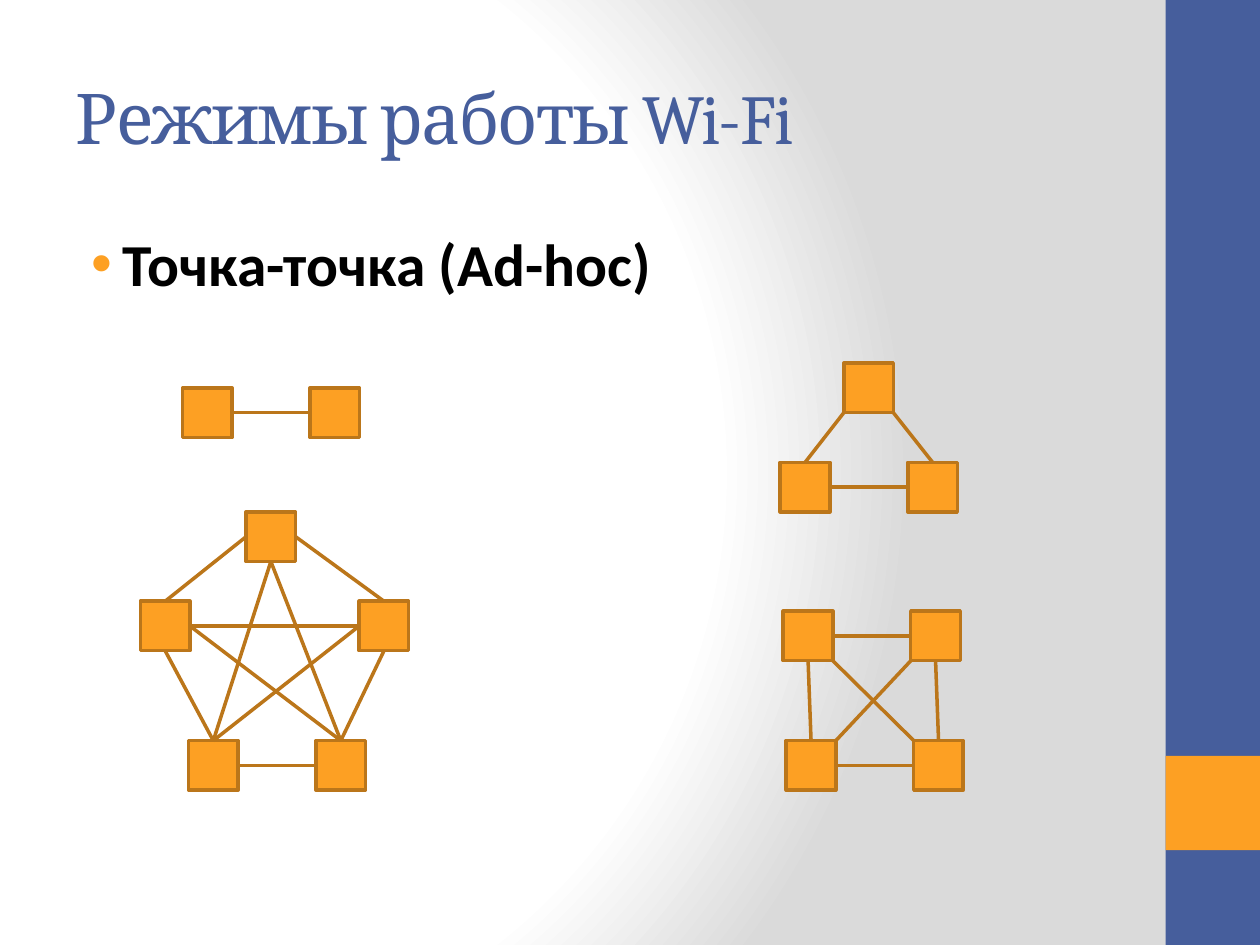
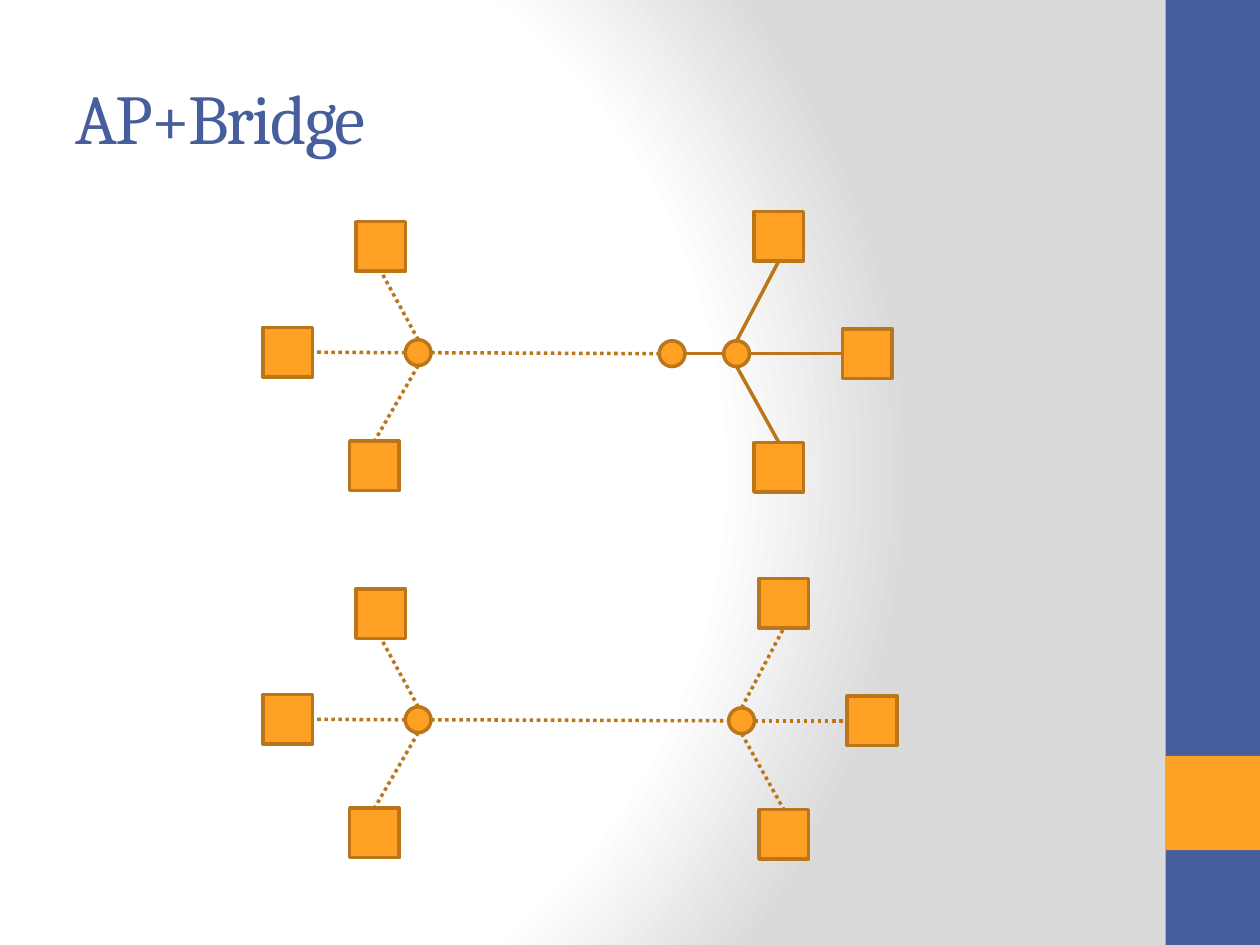
from itertools import pairwise

from lxml.etree import SubElement
from pptx import Presentation
from pptx.dml.color import RGBColor
from pptx.enum.dml import MSO_LINE
from pptx.enum.shapes import MSO_CONNECTOR, MSO_SHAPE
from pptx.enum.text import MSO_ANCHOR, MSO_AUTO_SIZE, PP_ALIGN
from pptx.oxml import parse_xml
from pptx.oxml.ns import nsdecls, qn
from pptx.util import Cm, Pt

COLORS = {
    "blue": "465E9C",
    "orange": "FDA023",
    "brown": "BB761A",
    "black": "000000",
    "white": "FFFFFF",
    "gray": "DADADA",
}
STATION, HUB = 1, 0.52  # sizes of squares and circles, cm

# Points of a shape as fractions of its width and height
SITES = {
    "top": (0.5, 0), "left": (0, 0.5), "bottom": (0.5, 1), "right": (1, 0.5),
    "top left": (0, 0), "top right": (1, 0),
    "bottom left": (0, 1), "bottom right": (1, 1),
}
JOINTS = {"top": 0, "left": 1, "bottom": 2, "right": 3}


class Deck:
    """Holds the common style and the slide being drawn."""

    def __init__(self):
        self.presentation = Presentation()
        self.presentation.slide_width = Cm(25.4)
        self.presentation.slide_height = Cm(19.05)
        self.set_background()

    def set_background(self):
        master = self.presentation.slide_master
        master.background.fill.solid()
        properties = master.element.find(".//" + qn("p:bgPr"))
        stops = "".join(
            f'<a:gs pos="{position}"><a:srgbClr val="{COLORS[name]}"/></a:gs>'
            for position, name in ((0, "white"), (75000, "white"), (100000, "gray")))
        gradient = parse_xml(
            f'<a:gradFill {nsdecls("a")} rotWithShape="1"><a:gsLst>{stops}</a:gsLst>'
            '<a:path path="circle"><a:fillToRect l="20000" t="50000" r="100000" b="50000"/>'
            '</a:path></a:gradFill>')
        properties.replace(properties.find(qn("a:solidFill")), gradient)

    def color(self, name):
        return RGBColor.from_string(COLORS[name])

    def add_slide(self, title):
        layout = self.presentation.slide_layouts.get_by_name("Title Only")
        self.slide = self.presentation.slides.add_slide(layout)
        self.shapes = self.slide.shapes
        self.add_box(MSO_SHAPE.RECTANGLE, 23.5, 0, 1.9, 19.05, "blue")
        self.add_box(MSO_SHAPE.RECTANGLE, 23.5, 15.24, 1.9, 1.9, "orange")
        self.format_title(title)

    def format_title(self, text):
        title = self.slide.shapes.title
        title.left, title.top = Cm(1.27), Cm(0.76)
        title.width, title.height = Cm(21.16), Cm(3.18)
        frame = title.text_frame
        frame.text = text
        frame.word_wrap = True
        frame.auto_size = MSO_AUTO_SIZE.NONE
        frame.vertical_anchor = MSO_ANCHOR.MIDDLE
        paragraph = frame.paragraphs[0]
        paragraph.alignment = PP_ALIGN.LEFT
        self.format_run(paragraph.runs[0], "Cambria", 40, "blue")
        paragraph.runs[0].font._element.set("spc", "-100")

    def format_run(self, run, font_name, size, color, bold=False):
        run.font.name = font_name
        run.font.size = Pt(size)
        run.font.bold = bold
        run.font.color.rgb = self.color(color)

    def add_bullet(self, text, left, top, width, height):
        box = self.shapes.add_textbox(Cm(left), Cm(top), Cm(width), Cm(height))
        box.text_frame.word_wrap = True
        paragraph = box.text_frame.paragraphs[0]
        paragraph.text = text
        paragraph.space_before = Pt(6.8)
        self.format_run(paragraph.runs[0], "Calibri", 34, "black", bold=True)
        properties = paragraph._p.get_or_add_pPr()
        properties.set("marL", str(Cm(0.96)))
        properties.set("indent", str(Cm(-0.64)))
        bullet_color = SubElement(properties, qn("a:buClr"))
        SubElement(bullet_color, qn("a:srgbClr"), val=COLORS["orange"])
        SubElement(properties, qn("a:buFont"), typeface="Arial")
        SubElement(properties, qn("a:buChar"), char="•")

    def add_box(self, kind, left, top, width, height, fill, line=None):
        shape = self.shapes.add_shape(kind, Cm(left), Cm(top), Cm(width), Cm(height))
        shape.shadow.inherit = False
        shape.fill.solid()
        shape.fill.fore_color.rgb = self.color(fill)
        if line:
            shape.line.color.rgb = self.color(line)
            shape.line.width = Pt(2)
        else:
            shape.line.fill.background()
        return shape

    def add_station(self, left, top):
        return self.add_box(MSO_SHAPE.RECTANGLE, left, top, STATION, STATION, "orange", "brown")

    def add_hub(self, center_x, center_y):
        return self.add_box(MSO_SHAPE.OVAL, center_x - HUB / 2, center_y - HUB / 2,
                            HUB, HUB, "orange", "brown")

    def add_link(self, start, start_site, end, end_site, dotted=False):
        points = []
        for shape, site in ((start, start_site), (end, end_site)):
            across, down = SITES[site]
            points += [int(shape.left + across * shape.width),
                       int(shape.top + down * shape.height)]
        link = self.shapes.add_connector(MSO_CONNECTOR.STRAIGHT, *points)
        for shape, site, connect in ((start, start_site, link.begin_connect),
                                     (end, end_site, link.end_connect)):
            if shape.auto_shape_type == MSO_SHAPE.RECTANGLE and site in JOINTS:
                connect(shape, JOINTS[site])
        link.line.color.rgb = self.color("brown")
        link.line.width = Pt(2)
        if dotted:
            link.line.dash_style = MSO_LINE.ROUND_DOT
        SubElement(link._element.spPr, qn("a:effectLst"))

    def add_mesh(self, positions, links):
        """Draw one group of stations and the links between them."""
        self.shapes = self.slide.shapes.add_group_shape().shapes
        stations = [self.add_station(*position) for position in positions]
        for start, start_site, end, end_site in links:
            self.add_link(stations[start], start_site, stations[end], end_site)
        self.shapes = self.slide.shapes

    def add_star(self, center_x, center_y, arms, side, dotted):
        """Draw a hub with stations beside, above and below it."""
        hub = self.add_hub(center_x, center_y)
        opposite = {"left": "right", "right": "left", "top": "bottom", "bottom": "top"}
        for site, (x, y) in zip((side, "top", "bottom"), arms):
            station = self.add_station(center_x + x, center_y + y)
            self.add_link(hub, site, station, opposite[site], dotted)
        return hub


def draw_ad_hoc(deck):
    deck.add_slide("Режимы работы Wi-Fi")
    deck.add_bullet("Точка-точка (Ad-hoc)", 1.27, 4.45, 22.2, 13.33)
    # Two stations
    deck.add_mesh([(3.68, 7.82), (6.25, 7.82)], [(0, "right", 1, "left")])
    # Three stations
    deck.add_mesh(
        [(17.01, 7.32), (15.73, 9.32), (18.3, 9.32)],
        [(1, "right", 2, "left"),
         (1, "top", 0, "bottom left"),
         (2, "top", 0, "bottom right")])
    # Four stations
    deck.add_mesh(
        [(15.79, 12.32), (18.36, 12.32), (15.85, 14.93), (18.42, 14.93)],
        [(0, "right", 1, "left"),
         (2, "right", 3, "left"),
         (0, "bottom", 2, "top"),
         (1, "bottom", 3, "top"),
         (1, "bottom left", 2, "top right"),
         (0, "bottom right", 3, "top left")])
    # Five stations: apex, left, right, lower left, lower right
    deck.add_mesh(
        [(4.96, 10.32), (2.83, 12.12), (7.24, 12.12), (3.8, 14.93), (6.37, 14.93)],
        [(1, "right", 2, "left"),
         (1, "top", 0, "left"),
         (2, "top", 0, "right"),
         (3, "right", 4, "left"),
         (3, "top", 1, "bottom"),
         (4, "top", 2, "bottom"),
         (4, "top", 0, "bottom"),
         (3, "top", 0, "bottom"),
         (3, "top", 2, "left"),
         (4, "top", 1, "right")])


def draw_bridge(deck):
    deck.add_slide("AP+Bridge")
    # Station offsets from the hub centre: beside, above, below
    left_arms = [(-3.13, -0.51), (-1.25, -2.64), (-1.38, 1.78)]
    right_arms = [(2.13, -0.5), (0.35, -2.87), (0.35, 1.79)]
    # Wireless cell bridged to a wired one
    cell = deck.add_star(8.43, 7.11, left_arms, "left", dotted=True)
    bridge = deck.add_hub(13.55, 7.13)
    switch = deck.add_star(14.85, 7.13, right_arms, "right", dotted=False)
    for (start, end), dotted in zip(pairwise((cell, bridge, switch)), (True, False)):
        deck.add_link(start, "right", end, "left", dotted)
    # Two wireless cells
    cell = deck.add_star(8.43, 14.51, left_arms, "left", dotted=True)
    other_cell = deck.add_star(14.95, 14.53, right_arms, "right", dotted=True)
    deck.add_link(cell, "right", other_cell, "left", dotted=True)


def main():
    deck = Deck()
    draw_ad_hoc(deck)
    draw_bridge(deck)
    deck.presentation.save("out.pptx")


if __name__ == "__main__":
    main()
